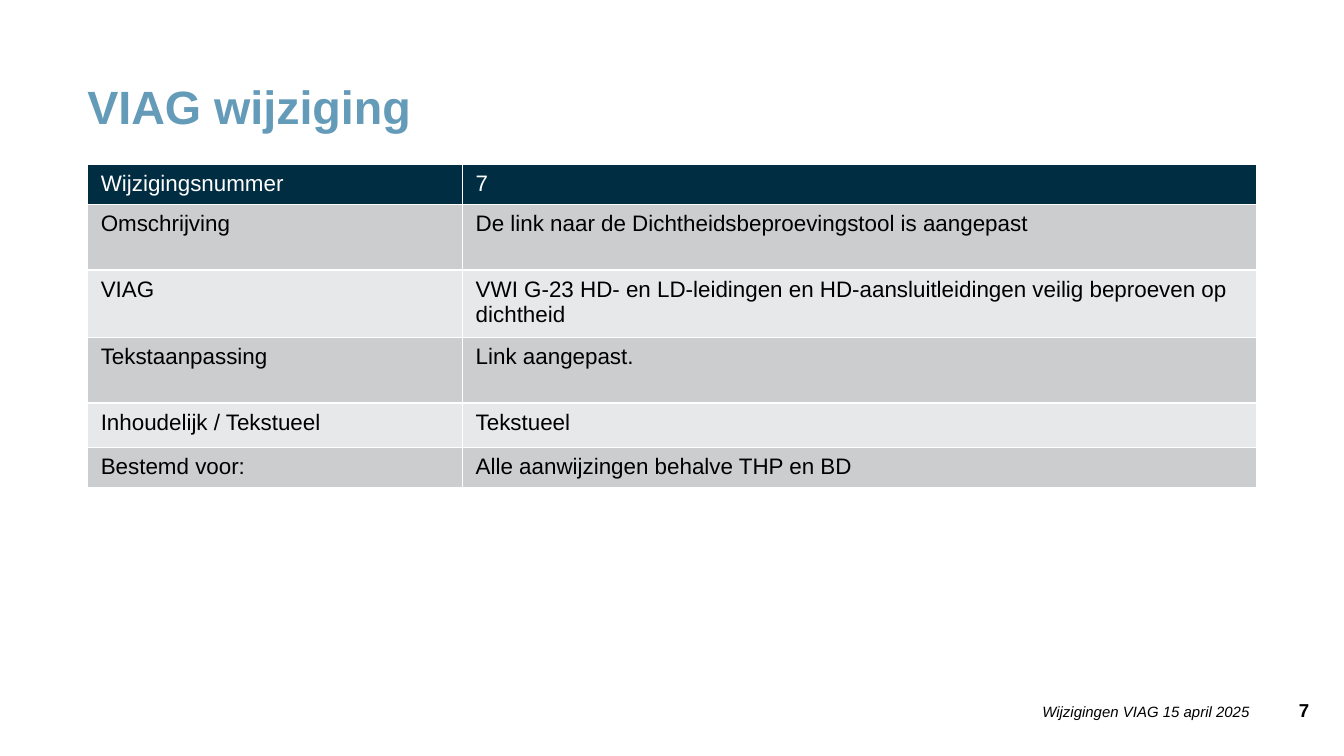
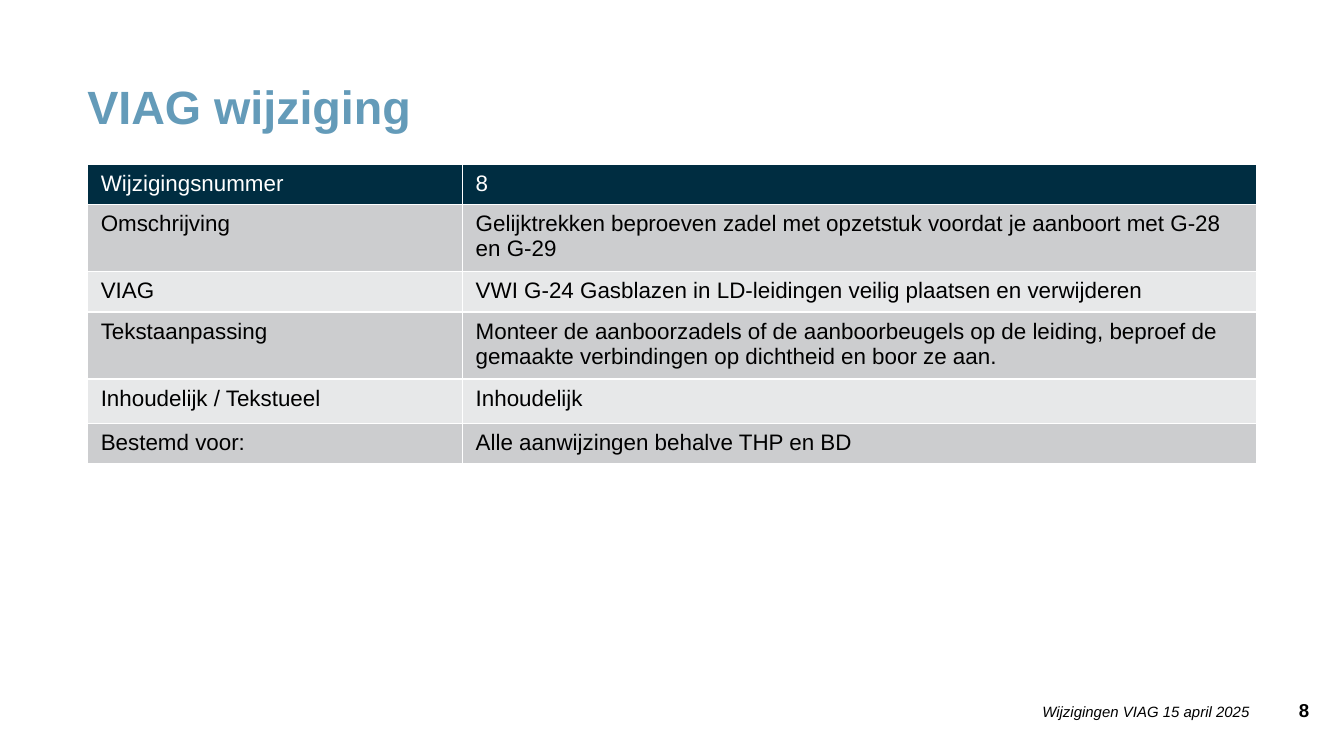
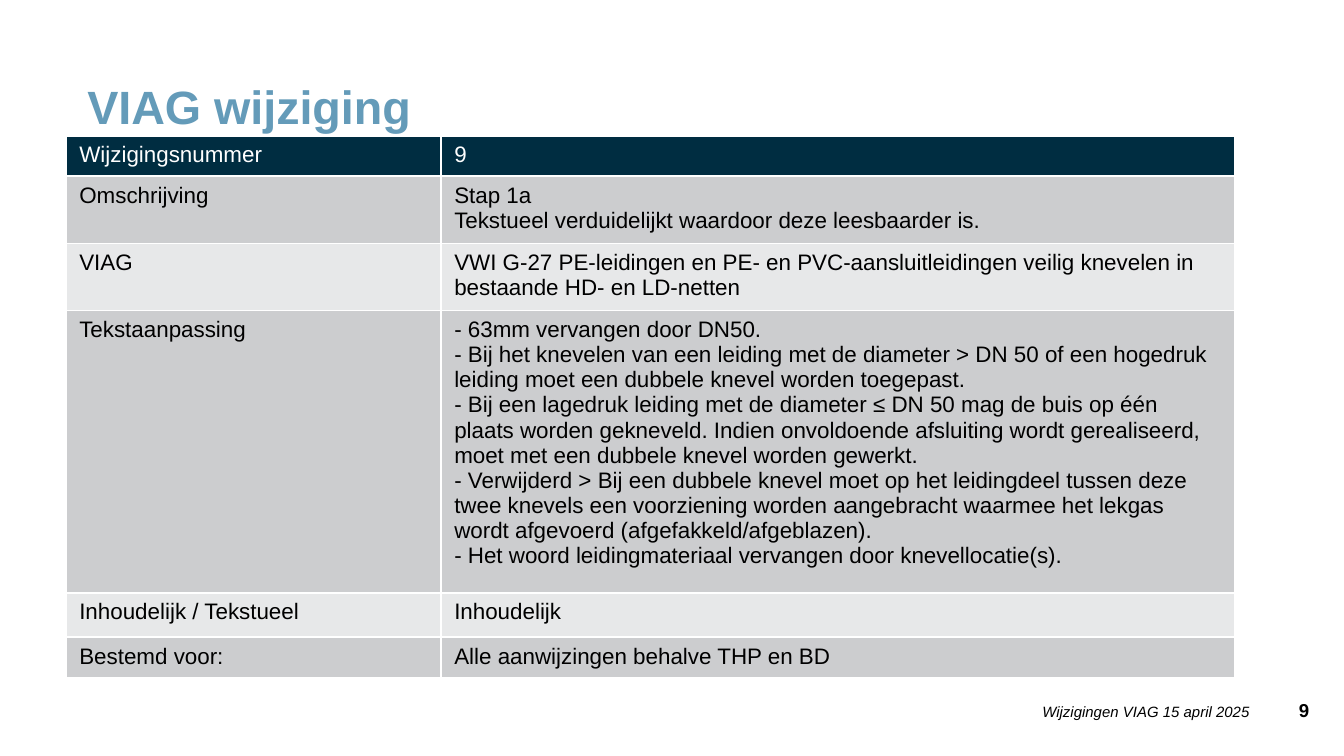
from dataclasses import dataclass

from pptx import Presentation
from pptx.dml.color import RGBColor
from pptx.enum.text import MSO_ANCHOR, PP_ALIGN as Align
from pptx.util import Inches, Pt

# Shared style
WHITE = RGBColor(0xFF, 0xFF, 0xFF)
BLACK = RGBColor(0x00, 0x00, 0x00)
TITLE_BLUE = RGBColor(0x64, 0x9B, 0xB9)
HEADER_BLUE = RGBColor(0x00, 0x2D, 0x41)
BANDS = (RGBColor(0xE7, 0xE8, 0xE9), RGBColor(0xCC, 0xCD, 0xCF))
FONT = "Arial"

TITLE = "VIAG wijziging"
FOOTER = "Wijzigingen VIAG 15 april 2025"
LABELS = ("Wijzigingsnummer", "Omschrijving", "VIAG", "Tekstaanpassing",
          "Inhoudelijk / Tekstueel", "Bestemd voor:")
AUDIENCE = "Alle aanwijzingen behalve THP en BD"
COL_WIDTHS = (2.79, 5.91)
MIN_HEIGHTS = (0, 0.49, 0.28, 0.49, 0.33, 0)  # rows grow to fit their text


@dataclass
class Change:
    number: int
    description: str
    viag: str
    adjustment: str
    kind: str
    height: float
    left: float = 0.65
    top: float = 1.22

    def values(self) -> tuple[str, ...]:
        return (str(self.number), self.description, self.viag,
                self.adjustment, self.kind, AUDIENCE)


CHANGES = (
    Change(7, "De link naar de Dichtheidsbeproevingstool is aangepast",
           "VWI G-23 HD- en LD-leidingen en HD-aansluitleidingen veilig "
           "beproeven op dichtheid",
           "Link aangepast.", "Tekstueel", height=2.41),
    Change(8, "Gelijktrekken beproeven zadel met opzetstuk voordat je "
           "aanboort met G-28 en G-29",
           "VWI G-24 Gasblazen in LD-leidingen veilig plaatsen en verwijderen",
           "Monteer de aanboorzadels of de aanboorbeugels op de leiding, "
           "beproef de gemaakte verbindingen op dichtheid en boor ze aan.",
           "Inhoudelijk", height=2.23),
    Change(9, "Stap 1a\nTekstueel verduidelijkt waardoor deze leesbaarder is.",
           "VWI G-27 PE-leidingen en PE- en PVC-aansluitleidingen veilig "
           "knevelen in bestaande HD- en LD-netten",
           "- 63mm vervangen door DN50.\n"
           "- Bij het knevelen van een leiding met de diameter > DN 50 of een "
           "hogedruk leiding moet een dubbele knevel worden toegepast.\n"
           "- Bij een lagedruk leiding met de diameter ≤ DN 50 mag de buis op "
           "één plaats worden gekneveld. Indien onvoldoende afsluiting wordt "
           "gerealiseerd, moet met een dubbele knevel worden gewerkt.\n"
           "- Verwijderd > Bij een dubbele knevel moet op het leidingdeel "
           "tussen deze twee knevels een voorziening worden aangebracht "
           "waarmee het lekgas wordt afgevoerd (afgefakkeld/afgeblazen).\n"
           "- Het woord leidingmateriaal vervangen door knevellocatie(s).",
           "Inhoudelijk", height=4.03, left=0.49, top=1.01),
)


def write(tf, text: str, *, size: float, color: RGBColor = BLACK,
          bold: bool = False, italic: bool = False,
          align: Align = Align.LEFT, spacing: float = 1.0) -> None:
    """Fill a text frame, one paragraph for each line of text."""
    tf.word_wrap = True
    for i, line in enumerate(text.split("\n")):
        p = tf.add_paragraph() if i else tf.paragraphs[0]
        p.alignment, p.line_spacing = align, spacing
        r = p.add_run()
        r.text = line
        f = r.font
        f.name, f.size, f.bold, f.italic = FONT, Pt(size), bold, italic
        f.color.rgb = color


def add_text(s, text: str, left: float, top: float, width: float,
             height: float, **fmt) -> None:
    tf = s.shapes.add_textbox(Inches(left), Inches(top),
                              Inches(width), Inches(height)).text_frame
    tf.margin_left = tf.margin_right = tf.margin_top = tf.margin_bottom = 0
    tf.vertical_anchor = MSO_ANCHOR.TOP
    write(tf, text, **fmt)


def add_change_table(s, change: Change) -> None:
    """Add the table; its default style draws the white cell borders."""
    frame = s.shapes.add_table(
        len(LABELS), len(COL_WIDTHS), Inches(change.left), Inches(change.top),
        Inches(sum(COL_WIDTHS)), Inches(change.height))
    table = frame.table
    for col, width in zip(table.columns, COL_WIDTHS):
        col.width = Inches(width)
    for i, pair in enumerate(zip(LABELS, change.values())):
        row = table.rows[i]
        row.height = Inches(MIN_HEIGHTS[i])
        is_header = i == 0
        for cell, text in zip(row.cells, pair):
            cell.fill.solid()
            cell.fill.fore_color.rgb = HEADER_BLUE if is_header else BANDS[i % 2]
            write(cell.text_frame, text, size=12,
                  color=WHITE if is_header else BLACK)
    frame.height = Inches(change.height)


def add_change_slide(prs, change: Change) -> None:
    s = prs.slides.add_slide(prs.slide_layouts[6])
    # Title
    add_text(s, TITLE, 0.65, 0.61, 7.87, 0.79, size=25, color=TITLE_BLUE,
             bold=True, spacing=0.95)
    # Footer and slide number
    add_text(s, FOOTER, 7.74, 5.23, 1.56, 0.24, size=8, italic=True,
             align=Align.RIGHT)
    add_text(s, str(change.number), 9.35, 5.2, 0.39, 0.24, size=10, bold=True,
             align=Align.RIGHT)
    # Change details
    add_change_table(s, change)


def main() -> None:
    prs = Presentation()
    prs.slide_width = Inches(10)
    prs.slide_height = prs.slide_width * 9 // 16
    for change in CHANGES:
        add_change_slide(prs, change)
    prs.save("out.pptx")


if __name__ == "__main__":
    main()
